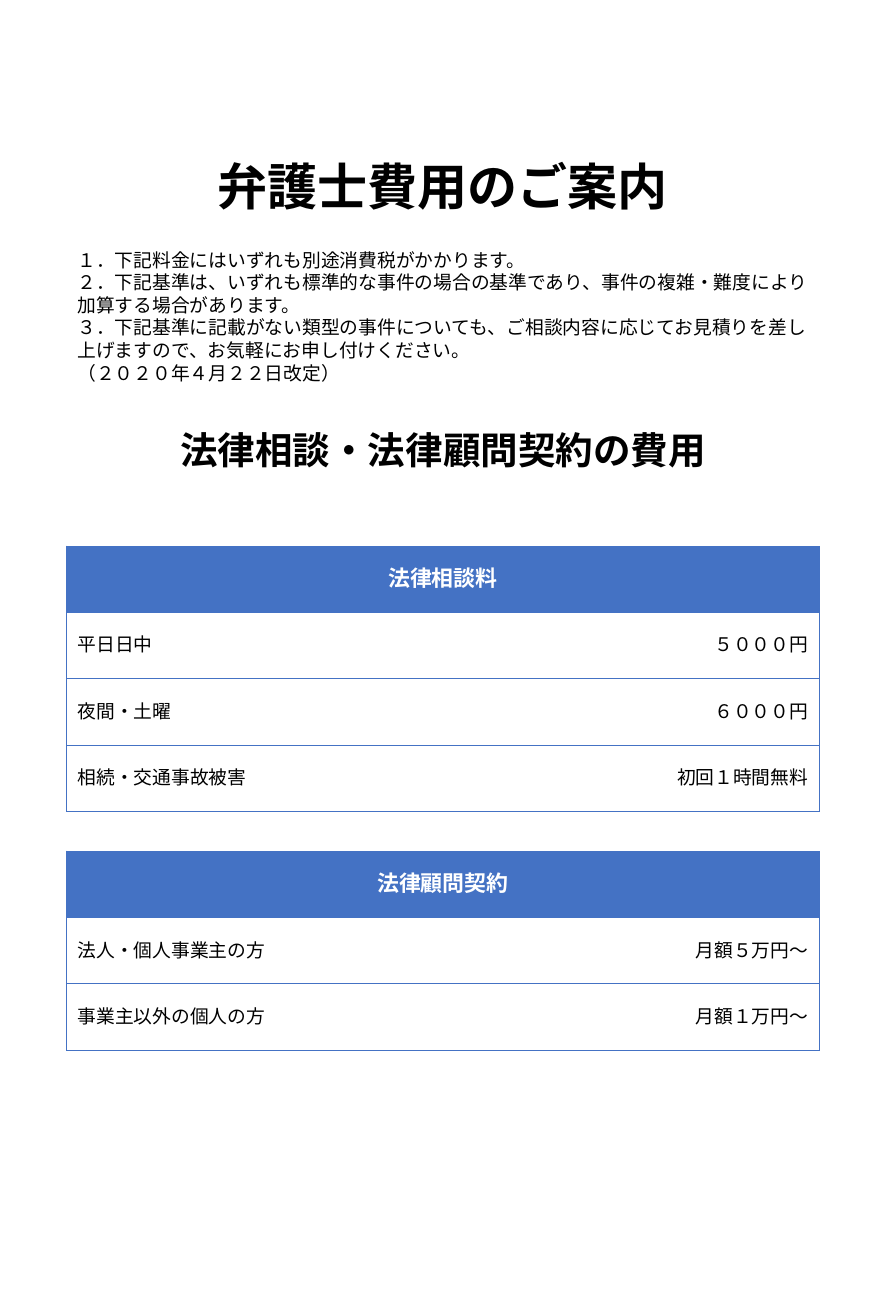
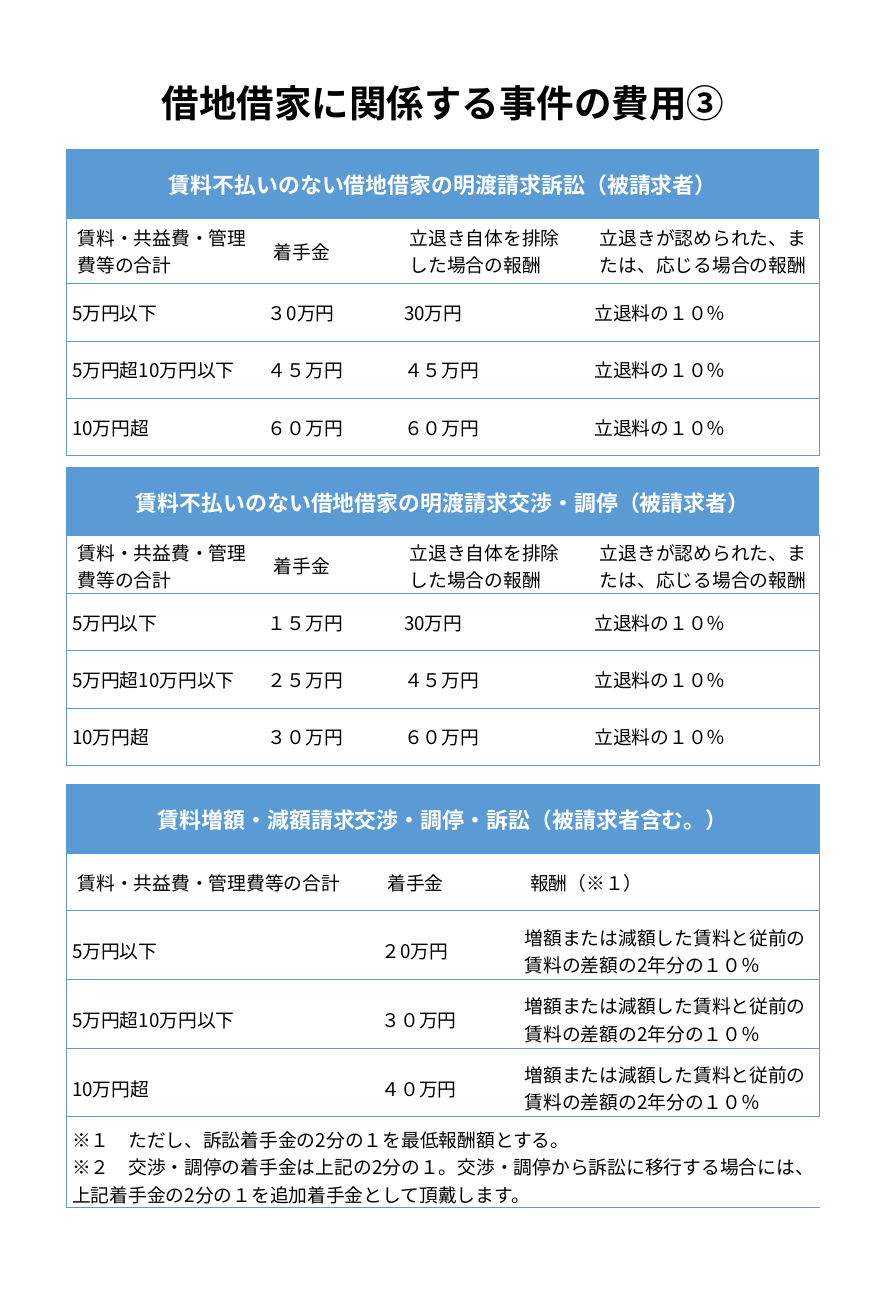
from lxml import etree
from pptx import Presentation
from pptx.dml.color import RGBColor
from pptx.enum import lang, text
from pptx.oxml import ns
from pptx.util import Inches, Pt

BLACK = RGBColor(0x00, 0x00, 0x00)
WHITE = RGBColor(0xFF, 0xFF, 0xFF)
BLUE = RGBColor(0x44, 0x72, 0xC4)
SKY = RGBColor(0x5B, 0x9B, 0xD5)
LATIN = "Calibri"
GOTHIC = "Noto Sans CJK JP"
LEFT, WIDTH = 0.59, 6.69
ALIGN = text.PP_ALIGN
MIDDLE = text.MSO_ANCHOR.MIDDLE

# Cell insets: left and right, top, bottom
WIDE = (0.1, 0.05, 0.05)
NARROW = (0.05, 0.1, 0.1)
TIGHT = (0.1, 0.02, 0)
TWO_LINE = (0.05, 0.1, 0)
NOTES = (0.05, 0.08, 0)


def write(frame, content, font, size, color=BLACK, bold=False, align=ALIGN.LEFT):
    """Fill a text frame and give Latin and Japanese characters the same font."""
    frame.word_wrap = True
    frame.text = content
    for paragraph in frame.paragraphs:
        paragraph.alignment = align
        for run in paragraph.runs:
            run.font.name = font
            run.font.size = Pt(size)
            run.font.bold = bold
            run.font.color.rgb = color
            run.font.language_id = lang.MSO_LANGUAGE_ID.JAPANESE
            latin = run.font._element.find(ns.qn("a:latin"))
            east_asian = etree.Element(ns.qn("a:ea"), typeface=font)
            latin.addnext(east_asian)


def add_fee_table(slide, top, color, font, widths, rows, last_align=ALIGN.LEFT):
    """Each row is (height, insets, texts); a row with one text spans all columns."""
    last = len(widths) - 1
    frame = slide.shapes.add_table(
        len(rows), len(widths), Inches(LEFT), Inches(top),
        Inches(WIDTH), Inches(sum(row[0] for row in rows)))
    fees = frame.table
    fees.first_row = fees.horz_banding = False
    for column, width in zip(fees.columns, widths):
        column.width = Inches(width)
    for r, (height, (side, above, below), texts) in enumerate(rows):
        fees.rows[r].height = Inches(height)
        for c in range(len(widths)):
            cell = fees.cell(r, c)
            cell.margin_left = cell.margin_right = Inches(side)
            cell.margin_top, cell.margin_bottom = Inches(above), Inches(below)
            cell.vertical_anchor = MIDDLE
            properties = cell._tc.get_or_add_tcPr()
            for edge, drawn in (("L", c == 0), ("R", c == last), ("T", True), ("B", True)):
                line = etree.SubElement(properties, ns.qn(f"a:ln{edge}"), w=str(Pt(0.5)))
                if drawn:
                    fill = etree.SubElement(line, ns.qn("a:solidFill"))
                    etree.SubElement(fill, ns.qn("a:srgbClr"), val=str(color))
                else:
                    etree.SubElement(line, ns.qn("a:noFill"))
            if r == 0:
                cell.fill.solid()
                cell.fill.fore_color.rgb = color
            else:
                cell.fill.background()
        if len(texts) == 1:
            fees.cell(r, 0).merge(fees.cell(r, last))
        for c, content in enumerate(texts):
            if r == 0:
                write(fees.cell(r, c).text_frame, content, font, 14, WHITE, True, ALIGN.CENTER)
            else:
                align = last_align if c == last else ALIGN.LEFT
                write(fees.cell(r, c).text_frame, content, font, 12, align=align)


prs = Presentation()
prs.slide_width, prs.slide_height = Inches(7.87), Inches(11.69)
consulting, tenancy = [prs.slides.add_slide(prs.slide_layouts[6]) for _ in range(2)]

# Headings and introduction
title = consulting.shapes.add_textbox(
    Inches(LEFT), Inches(1.37), Inches(WIDTH), Inches(0.62)).text_frame
write(title, "弁護士費用のご案内", LATIN, 32, bold=True, align=ALIGN.CENTER)
title.vertical_anchor = MIDDLE
title.paragraphs[0].line_spacing = 0.9

intro = consulting.shapes.add_textbox(
    Inches(LEFT), Inches(2.16), Inches(WIDTH), Inches(1.31)).text_frame
write(intro, "\n".join([
    "１．下記料金にはいずれも別途消費税がかかります。",
    "２．下記基準は、いずれも標準的な事件の場合の基準であり、事件の複雑・難度により加算する場合があります。",
    "３．下記基準に記載がない類型の事件についても、ご相談内容に応じてお見積りを差し上げますので、お気軽にお申し付けください。",
    "（２０２０年４月２２日改定）",
]), LATIN, 12)

for slide, top, heading in [
    (consulting, 3.74, "法律相談・法律顧問契約の費用"),
    (tenancy, 0.66, "借地借家に関係する事件の費用③"),
]:
    section = slide.shapes.add_textbox(
        Inches(LEFT), Inches(top), Inches(WIDTH), Inches(0.5)).text_frame
    write(section, heading, GOTHIC, 24, bold=True, align=ALIGN.CENTER)

# Consultation and advisory fees
for top, rows in [
    (4.85, [["法律相談料"], ["平日日中", "５０００円"], ["夜間・土曜", "６０００円"],
            ["相続・交通事故被害", "初回１時間無料"]]),
    (7.56, [["法律顧問契約"], ["法人・個人事業主の方", "月額５万円～"],
            ["事業主以外の個人の方", "月額１万円～"]]),
]:
    add_fee_table(consulting, top, BLUE, LATIN, [WIDTH / 2] * 2,
                  [(0.59, WIDE, texts) for texts in rows], ALIGN.RIGHT)

# Eviction claims
RENT = "賃料・共益費・管理費等の合計"
RENT_BANDS = ["5万円以下", "5万円超10万円以下", "10万円超"]
REWARDS = ["30万円", "４５万円", "６０万円"]
for top, heading, label_height, label_insets, retainers in [
    (1.33, "賃料不払いのない借地借家の明渡請求訴訟（被請求者）",
     0.58, WIDE, ["３0万円", "４５万円", "６０万円"]),
    (4.15, "賃料不払いのない借地借家の明渡請求交渉・調停（被請求者）",
     0.51, TIGHT, ["１５万円", "２５万円", "３０万円"]),
]:
    labels = [RENT, "着手金", "立退き自体を排除した場合の報酬",
              "立退きが認められた、または、応じる場合の報酬"]
    rows = [(0.61, WIDE, [heading]), (label_height, label_insets, labels)]
    for band, retainer, reward in zip(RENT_BANDS, retainers, REWARDS):
        rows.append((0.51, NARROW, [band, retainer, reward, "立退料の１０％"]))
    add_fee_table(tenancy, top, SKY, GOTHIC, [1.74, 1.21, 1.69, 2.05], rows)

# Rent revision claims
rows = [(0.61, WIDE, ["賃料増額・減額請求交渉・調停・訴訟（被請求者含む。）"]),
        (0.51, WIDE, [RENT, "着手金", "報酬（※１）"])]
for band, retainer in zip(RENT_BANDS, ["２0万円", "３０万円", "４０万円"]):
    rows.append((0.61, TWO_LINE, [
        band, retainer, "増額または減額した賃料と従前の賃料の差額の2年分の１０％"]))
rows.append((0.81, NOTES, [
    "※１　ただし、訴訟着手金の2分の１を最低報酬額とする。\n"
    "※２　交渉・調停の着手金は上記の2分の１。交渉・調停から訴訟に移行する場合には、"
    "上記着手金の2分の１を追加着手金として頂戴します。"]))
add_fee_table(tenancy, 6.97, SKY, GOTHIC, [2.75, 1.27, 2.67], rows)

prs.save("out.pptx")
